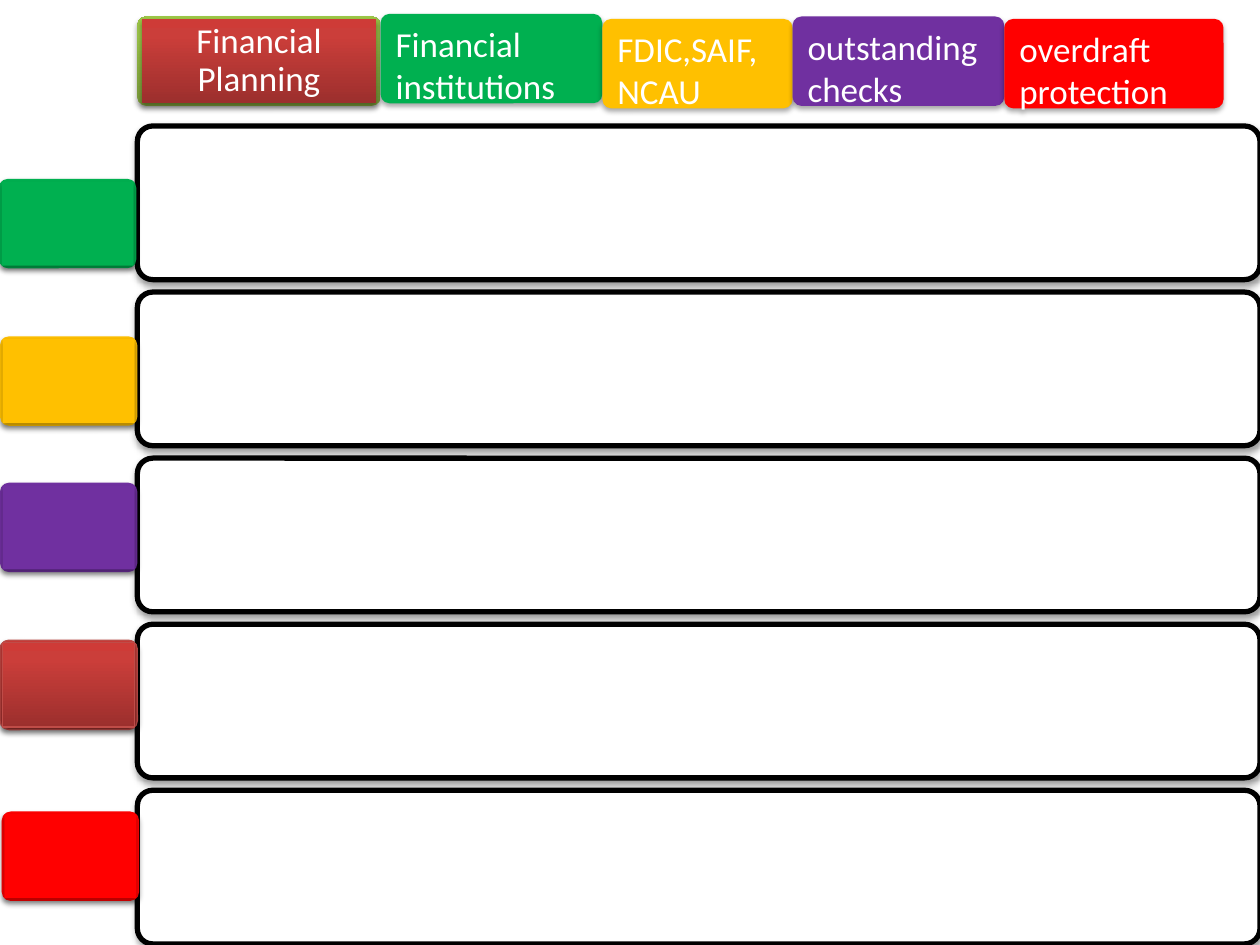
"""Build a vocabulary matching slide: coloured terms above five blank answer rows."""
from copy import deepcopy

from lxml.etree import SubElement
from pptx import Presentation
from pptx.dml.color import RGBColor as Rgb
from pptx.enum.shapes import MSO_SHAPE as Preset
from pptx.enum.text import MSO_ANCHOR as Anchor, PP_ALIGN as Align
from pptx.oxml.ns import qn
from pptx.util import Pt

COLORS = {
    "white": "FFFFFF", "black": "000000", "green": "00B050", "gold": "FFC000",
    "purple": "7030A0", "red": "FF0000", "brick edge": "BF4C48",
}
GRADIENTS = {
    "lime": [(0, "779737"), (0.8, "9BC348"), (1, "9DC746")],
    "brick": [(0, "9C2F2D"), (0.8, "CB3E3A"), (1, "CE3B37")],
}
PLANNING = ("Financial Planning", "brick", 9.4, 139)
TERMS = [
    ("Financial institutions", "green", 7.9, 126.7),
    ("FDIC,SAIF, NCAU", "gold", 10.8, 108.7),
    ("outstanding checks", "purple", 9.4, 121),
    ("overdraft protection", "red", 10.8, 125.3),
]
TABS = [
    ("gold", 0, 192.2), ("green", -0.6, 102.2), ("brick", 0, 365.8),
    ("purple", 0, 275.8), ("red", 1, 463.7),
]
EDGES = {"brick": ("brick edge", 0.75)}
ROW_COUNT, ROW_TOP, ROW_PITCH, ROW_HEIGHT = 5, 72, 94.9, 87.8
SLIDE_WIDTH, SLIDE_HEIGHT = 720, 540
LEFT, TAB_HEIGHT = 78.5, 51.1
ROW_SHADOW, CARD_SHADOW = (38, 1.6), (35, 1.8)
FONT = {"name": "Calibri", "size": Pt(20)}
PLANNING_FRAME = {
    "vertical_anchor": Anchor.MIDDLE, "margin_left": Pt(3.6), "margin_right": Pt(3.6),
    "margin_top": Pt(3.6), "margin_bottom": Pt(3.6),
}
PLANNING_PARAGRAPH = {"alignment": Align.CENTER, "line_spacing": 0.9}


def color(name):
    return Rgb.from_string(COLORS[name])


def apply(target, values):
    for key, value in values.items():
        setattr(target, key, value)


def paint(shape, name):
    if name in COLORS:
        shape.fill.solid()
        shape.fill.fore_color.rgb = color(name)
        return
    shape.fill.gradient()
    shape.fill.gradient_angle = 90
    stop_list = shape.element.spPr.find(qn("a:gradFill")).find(qn("a:gsLst"))
    stop_list.append(deepcopy(stop_list[0]))
    for stop, (position, tone) in zip(shape.fill.gradient_stops, GRADIENTS[name]):
        stop.position = position
        stop.color.rgb = Rgb.from_string(tone)


def cast_shadow(shape, opacity, distance):
    shape.shadow.inherit = False
    effects = shape.element.spPr.find(qn("a:effectLst"))
    outer = SubElement(effects, qn("a:outerShdw"), blurRad=str(Pt(3.1)),
                       dist=str(Pt(distance)), dir="5400000", rotWithShape="0")
    tone = SubElement(outer, qn("a:srgbClr"), val=COLORS["black"])
    SubElement(tone, qn("a:alpha"), val=str(opacity * 1000))


def add_box(shapes, preset, box, fill, edge=None, shadow=CARD_SHADOW):
    shape = shapes.add_shape(preset, *map(Pt, box))
    if preset == Preset.ROUNDED_RECTANGLE:
        shape.adjustments[0] = 0.1
    paint(shape, fill)
    if edge:
        shape.line.color.rgb = color(edge[0])
        shape.line.width = Pt(edge[1])
    else:
        shape.line.fill.background()
    cast_shadow(shape, *shadow)
    return shape


def add_bevel(shapes, box, outer, inner, inset_x, inset_y, edge=None):
    left, top, width, height = box
    core = (left + inset_x, top + inset_y, width - 2 * inset_x, height - 2 * inset_y)
    pair = shapes.add_group_shape().shapes
    add_box(pair, Preset.ROUNDED_RECTANGLE, box, outer, edge)
    return add_box(pair, Preset.RECTANGLE, core, inner, edge)


def write(shape, term, frame_format, paragraph_format):
    frame = shape.text_frame
    frame.word_wrap = True
    apply(frame, frame_format)
    paragraph = frame.paragraphs[0]
    apply(paragraph, paragraph_format)
    run = paragraph.add_run()
    run.text = term
    apply(run.font, FONT)
    run.font.color.rgb = color("white")


def main():
    deck = Presentation()
    deck.slide_width, deck.slide_height = Pt(SLIDE_WIDTH), Pt(SLIDE_HEIGHT)
    shapes = deck.slides.add_slide(deck.slide_layouts[6]).shapes

    answer_rows = shapes.add_group_shape().shapes
    for index in range(ROW_COUNT):
        box = (LEFT, ROW_TOP + index * ROW_PITCH, SLIDE_WIDTH - LEFT, ROW_HEIGHT)
        add_box(answer_rows, Preset.ROUNDED_RECTANGLE, box, "white", ("black", 3), ROW_SHADOW)

    term, fill, top, width = PLANNING
    planning = add_bevel(shapes, (LEFT, top, width, TAB_HEIGHT), "lime", fill, 2.5, 1.5)
    write(planning, term, PLANNING_FRAME, PLANNING_PARAGRAPH)

    for fill, left, top in TABS:
        add_bevel(shapes, (left, top, LEFT, TAB_HEIGHT), fill, fill, 1.5, 1.5, EDGES.get(fill))

    left = LEFT + width
    for term, fill, top, width in TERMS:
        card = add_box(shapes, Preset.ROUNDED_RECTANGLE, (left, top, width, TAB_HEIGHT), fill)
        write(card, term, {"vertical_anchor": Anchor.TOP}, {"alignment": Align.LEFT})
        left += width

    deck.save("out.pptx")


if __name__ == "__main__":
    main()
